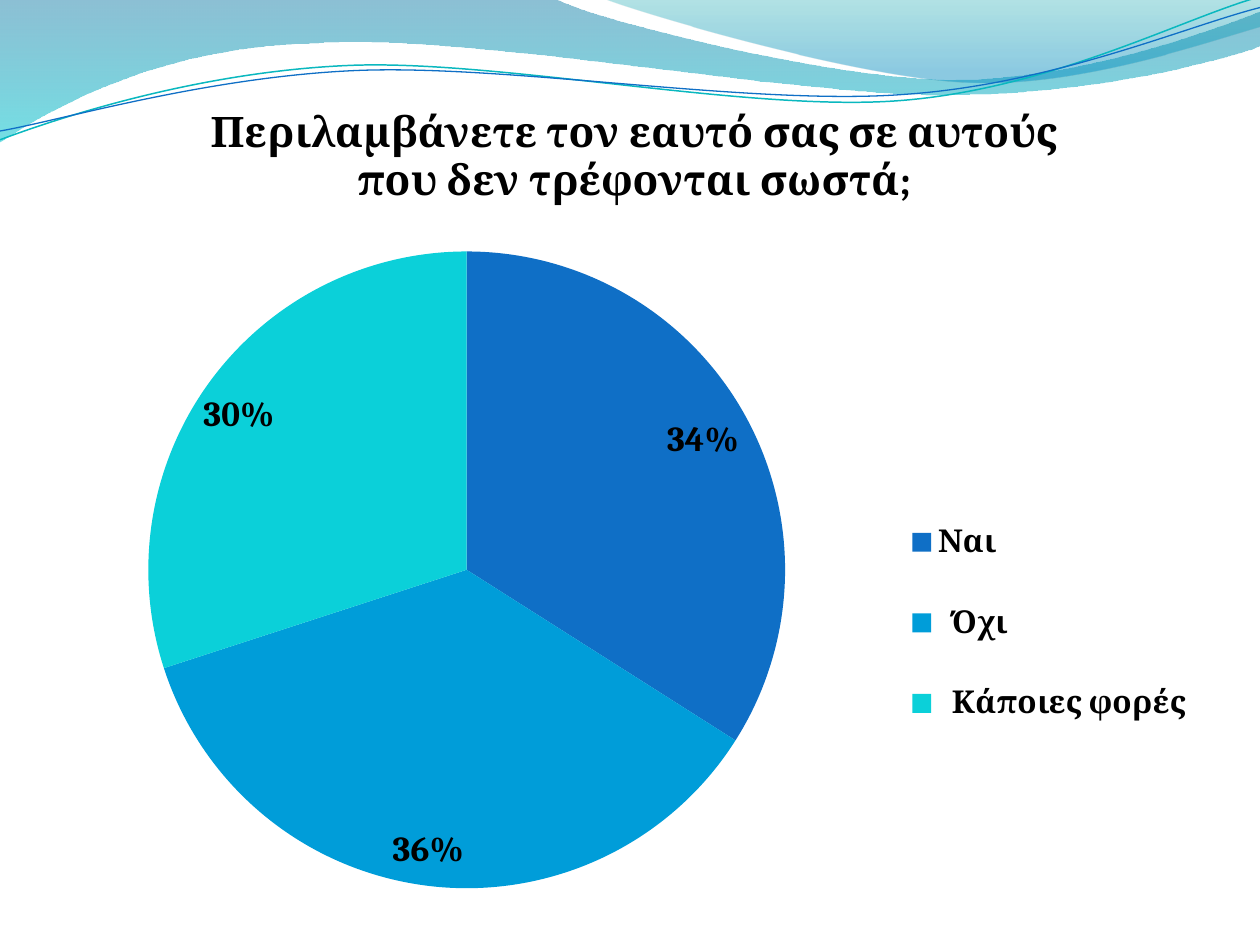
from dataclasses import dataclass
from typing import Optional

from lxml import etree
from pptx import Presentation
from pptx.chart.data import CategoryChartData
from pptx.dml.color import RGBColor
from pptx.enum import chart as ch
from pptx.oxml import parse_xml
from pptx.oxml.ns import nsdecls, qn
from pptx.util import Inches, Pt

COLORS = {
    "text": "000000",
    "yes": "0F6FC6",
    "no": "009DD9",
    "sometimes": "0BD0D9",
    "teal line": "0AB8BF",
    "blue line": "0F6FC6",
    "deep blue": "0074A1",
    "aqua": "00C6CF",
    "sea green": "00A1A9",
    "sky blue": "008BBF",
}
FONT = "Cambria"
QUESTION = "Περιλαμβάνετε τον εαυτό σας σε αυτούς που δεν τρέφονται σωστά;"


@dataclass
class Stop:
    position: float
    color: str
    opacity: int


@dataclass
class Wave:
    """Segments of two numbers are straight lines, of six are Bézier curves."""
    start: tuple[float, float]
    segments: list[tuple[float, ...]]
    stops: tuple[Stop, ...] = ()
    line: Optional[str] = None
    line_width: float = 0


@dataclass
class Answer:
    """The shift moves the share's label, in fractions of the chart."""
    label: str
    share: float
    color: str
    shift: Optional[tuple[float, float]] = None


WAVES = [
    Wave((0, 0), [
        (4.4, -0.01),
        (4.76, 0.17, 6.64, 0.63, 7.58, 0.63),
        (8.53, 0.63, 9.58, 0.26, 10, 0.09),
        (10.01, 0.36),
        (9.83, 0.44, 8.7, 0.76, 7.46, 0.75),
        (6.22, 0.75, 3.82, 0.28, 2.57, 0.34),
        (1.29, 0.36, 0.46, 0.83, -0.01, 1.13),
    ], stops=(Stop(0, "deep blue", 45), Stop(1, "aqua", 55))),
    Wave((4.79, -0.01), [
        (5.09, 0.11, 6.82, 0.62, 7.69, 0.65),
        (8.56, 0.69, 9.61, 0.32, 10, 0.21),
        (10, 0),
    ], stops=(Stop(0, "sea green", 30), Stop(0.8, "sky blue", 45))),
    Wave((0, 1.11), [
        (0.48, 0.93, 1.58, 0.57, 2.77, 0.52),
        (3.95, 0.47, 5.93, 0.89, 7.13, 0.8),
        (8.33, 0.71, 9.38, 0.15, 9.98, -0.02),
    ], line="teal line", line_width=0.85),
    Wave((0, 1.04), [
        (0.47, 0.96, 1.64, 0.61, 2.83, 0.56),
        (4.03, 0.51, 5.97, 0.84, 7.17, 0.75),
        (8.36, 0.67, 9.41, 0.21, 10, 0.06),
    ], line="blue line", line_width=0.75),
]
ANSWERS = [
    Answer("Ναι ", 0.34, "yes"),
    Answer("  Όχι ", 0.36, "no", (-0.03, -0.01)),
    Answer("  Κάποιες φορές ", 0.3, "sometimes", (-0.01, 0.01)),
]


def rgb(name: str) -> RGBColor:
    return RGBColor.from_string(COLORS[name])


def style_font(font, size: float) -> None:
    for attribute, value in {"name": FONT, "size": Pt(size), "bold": True}.items():
        setattr(font, attribute, value)
    font.color.rgb = rgb("text")


def bend_segments(outline, segments: list[tuple[float, ...]]) -> None:
    """Merge the three straight steps of each curved segment into one curve."""
    steps = iter(list(outline._element.iter(qn("a:lnTo"))))
    for segment in segments:
        step = next(steps)
        if len(segment) == 6:
            curve = etree.Element(qn("a:cubicBezTo"))
            step.addprevious(curve)
            for part in (step, next(steps), next(steps)):
                curve.append(part[0])
                part.getparent().remove(part)


def fill_gradient(fill, stops: tuple[Stop, ...]) -> None:
    fill.gradient()
    fill.gradient_angle = 270
    for target, stop in zip(fill.gradient_stops, stops):
        target.position = stop.position
        target.color.rgb = rgb(stop.color)
        color = target._gs.find(qn("a:srgbClr"))
        etree.SubElement(color, qn("a:alpha"), val=str(stop.opacity * 1000))


def draw_wave(slide, wave: Wave) -> None:
    points = [
        (Inches(x), Inches(y))
        for segment in wave.segments
        for x, y in zip(segment[::2], segment[1::2])
    ]
    start_x, start_y = wave.start
    builder = slide.shapes.build_freeform(Inches(start_x), Inches(start_y))
    builder.add_line_segments(points, close=bool(wave.stops))
    outline = builder.convert_to_shape()
    outline.shadow.inherit = False
    bend_segments(outline, wave.segments)
    if wave.stops:
        fill_gradient(outline.fill, wave.stops)
    else:
        outline.fill.background()
    if wave.line:
        outline.line.color.rgb = rgb(wave.line)
        outline.line.width = Pt(wave.line_width)
    else:
        outline.line.fill.background()


def manual_layout(prefix: str = "", **fractions: float):
    sizes = "".join(f'<c:{key} val="{value}"/>' for key, value in fractions.items())
    return parse_xml(
        f'<c:layout {nsdecls("c")}><c:manualLayout>{prefix}{sizes}'
        "</c:manualLayout></c:layout>"
    )


def place(element, before: str, inner: bool = False, **fractions: float) -> None:
    """Set a manual layout, in fractions of the chart, ahead of the named child."""
    prefix = '<c:layoutTarget val="inner"/>' if inner else ""
    prefix += "".join(f'<c:{axis}Mode val="edge"/>' for axis in "xy")
    for old in element.findall(qn("c:layout")):
        element.remove(old)
    element.find(qn(before)).addprevious(manual_layout(prefix, **fractions))


def shift_label(labels, index: int, shift: tuple[float, float]) -> None:
    """Move one label, which keeps the format shared by all labels."""
    shared = labels._element
    label = parse_xml(f'<c:dLbl {nsdecls("c")}><c:idx val="{index}"/></c:dLbl>')
    label.append(manual_layout(x=shift[0], y=shift[1]))
    for name in ("numFmt", "spPr", "txPr", "dLblPos", "showLegendKey", "showVal",
                 "showCatName", "showSerName", "showPercent", "showBubbleSize"):
        setting = shared.find(qn(f"c:{name}"))
        if setting is not None:
            label.append(parse_xml(etree.tostring(setting)))
    shared.insert(len(shared.findall(qn("c:dLbl"))), label)


def draw_answers_pie(slide) -> None:
    data = CategoryChartData(number_format="0%")
    data.categories = [answer.label for answer in ANSWERS]
    data.add_series(QUESTION, [answer.share for answer in ANSWERS])
    pie = slide.shapes.add_chart(
        ch.XL_CHART_TYPE.PIE, Inches(0.31), Inches(0.7), Inches(9.3), Inches(6.48), data
    ).chart
    pie.font.name, pie.font.size = FONT, Pt(10)
    pie.has_title = True
    title = pie.chart_title.text_frame
    title.text = QUESTION
    style_font(title.paragraphs[0].runs[0].font, 24)
    pie.chart_title.include_in_layout = False
    pie.has_legend = True
    legend = pie.legend
    legend.position = ch.XL_LEGEND_POSITION.RIGHT
    legend.include_in_layout = False
    style_font(legend.font, 18)

    plot = pie.plots[0]
    plot.vary_by_categories = True
    labels = plot.series[0].data_labels
    label_format = {
        "show_value": True,
        "number_format": "0%",
        "number_format_is_linked": False,
        "position": ch.XL_LABEL_POSITION.INSIDE_END,
    }
    for attribute, value in label_format.items():
        setattr(labels, attribute, value)
    style_font(labels.font, 20)
    for index, answer in enumerate(ANSWERS):
        fill = plot.series[0].points[index].format.fill
        fill.solid()
        fill.fore_color.rgb = rgb(answer.color)
        if answer.shift:
            shift_label(labels, index, answer.shift)

    plot_area = pie._chartSpace.chart.plotArea
    place(pie.chart_title._element, "c:overlay", x=0.14, y=0.01)
    place(plot_area, "c:pieChart", inner=True, x=0.09, y=0.2, w=0.55, h=0.78)
    place(legend._element, "c:overlay", x=0.73, y=0.48, w=0.27, h=0.35)


def main() -> None:
    deck = Presentation()
    deck.slide_width, deck.slide_height = Inches(10), Inches(7.5)
    slide = deck.slides.add_slide(deck.slide_layouts[6])
    for wave in WAVES:
        draw_wave(slide, wave)
    draw_answers_pie(slide)
    deck.save("out.pptx")


if __name__ == "__main__":
    main()
